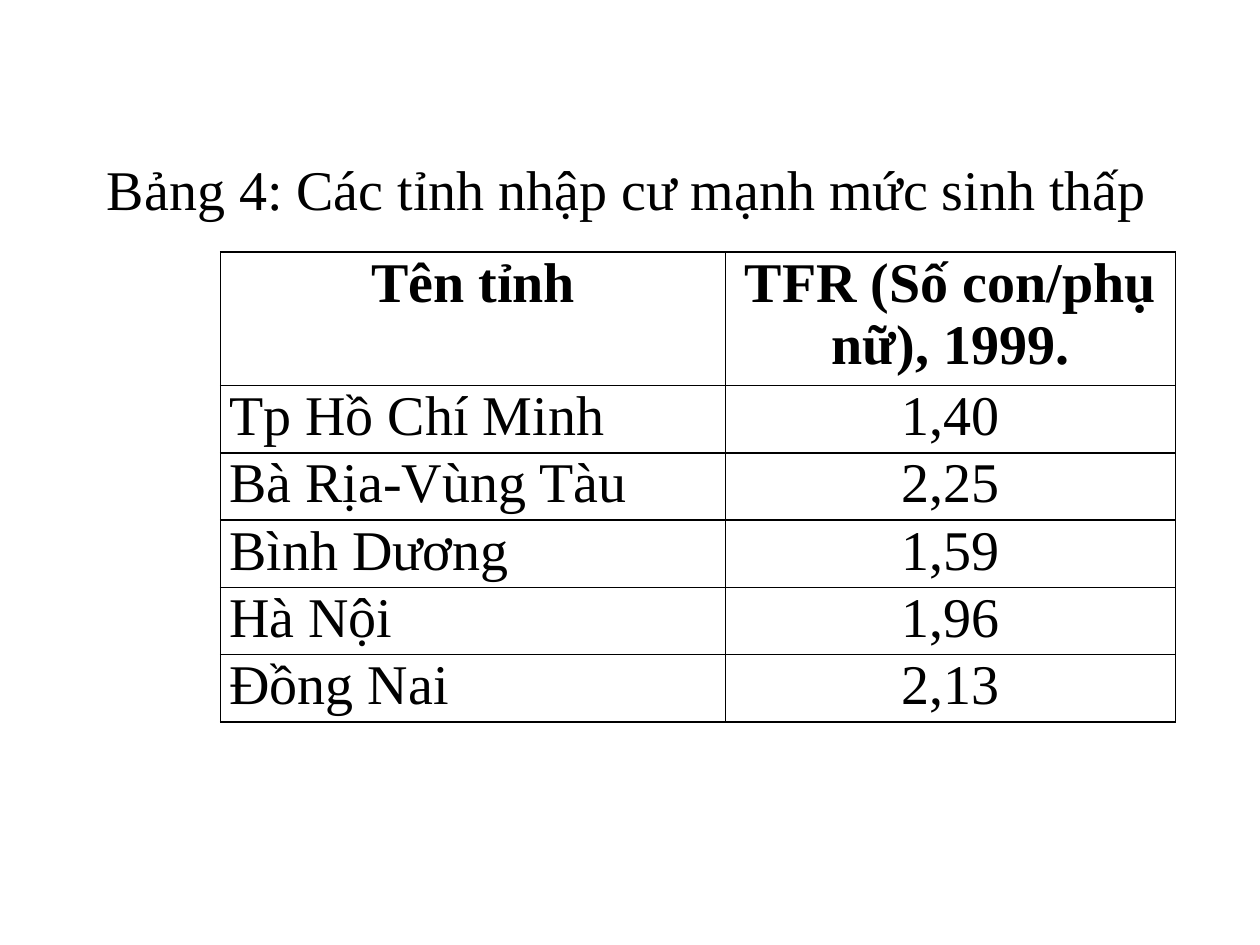
from dataclasses import dataclass

from lxml import etree
from pptx import Presentation
from pptx.dml.color import RGBColor
from pptx.enum.text import MSO_ANCHOR, PP_ALIGN
from pptx.oxml.ns import qn
from pptx.util import Inches, Pt

LEFT = PP_ALIGN.LEFT
CENTER = PP_ALIGN.CENTER
JUSTIFY = PP_ALIGN.JUSTIFY
MIDDLE = MSO_ANCHOR.MIDDLE


@dataclass(frozen=True)
class Theme:
    font: str = "Times New Roman"
    text_size: int = 32
    text_color: str = "000000"
    border_color: str = "000000"
    border_width: int = 1


HEADERS = ("Tên tỉnh", "TFR (Số con/phụ nữ), 1999.")
PROVINCES = (
    ("Tp Hồ Chí Minh", "1,40", LEFT),
    ("Bà Rịa-Vùng Tàu", "2,25", LEFT),
    ("Bình Dương", "1,59", JUSTIFY),
    ("Hà Nội", "1,96", JUSTIFY),
    ("Đồng Nai", "2,13", JUSTIFY),
)
COLUMN_WIDTHS = (4.01, 3.57)
HEADER_HEIGHT = 1.06
TABLE_HEIGHT = 3.73


class SlideBuilder:
    def __init__(self, slide, theme):
        self.slide = slide
        self.theme = theme

    def set_text(self, text_frame, text, alignment, bold=False):
        text_frame.text = text
        paragraph = text_frame.paragraphs[0]
        paragraph.alignment = alignment
        for run in paragraph.runs:
            run.font.name = self.theme.font
            run.font.size = Pt(self.theme.text_size)
            run.font.bold = bold
            run.font.color.rgb = RGBColor.from_string(self.theme.text_color)

    def caption(self, text, left, top, width, height):
        box = self.slide.shapes.add_textbox(
            Inches(left), Inches(top), Inches(width), Inches(height))
        box.text_frame.word_wrap = True
        box.text_frame.vertical_anchor = MIDDLE
        self.set_text(box.text_frame, text, LEFT)

    def add_borders(self, cell):
        properties = cell._tc.get_or_add_tcPr()
        for position, side in enumerate(("lnL", "lnR", "lnT", "lnB")):
            line = etree.Element(
                qn(f"a:{side}"), w=str(Pt(self.theme.border_width)))
            fill = etree.SubElement(line, qn("a:solidFill"))
            etree.SubElement(
                fill, qn("a:srgbClr"), val=self.theme.border_color)
            properties.insert(position, line)

    def fill_cell(self, cell, text, alignment, bold):
        cell.margin_left = cell.margin_right = Inches(0.07)
        cell.margin_top = cell.margin_bottom = 0
        cell.fill.background()
        self.add_borders(cell)
        self.set_text(cell.text_frame, text, alignment, bold)

    def province_table(self, left, top):
        table = self.slide.shapes.add_table(
            len(PROVINCES) + 1, len(HEADERS), Inches(left), Inches(top),
            Inches(sum(COLUMN_WIDTHS)), Inches(TABLE_HEIGHT)).table
        for column, width in zip(table.columns, COLUMN_WIDTHS):
            column.width = Inches(width)
        body_height = (TABLE_HEIGHT - HEADER_HEIGHT) / len(PROVINCES)
        for index, row in enumerate(table.rows):
            row.height = Inches(body_height if index else HEADER_HEIGHT)

        for column, header in enumerate(HEADERS):
            self.fill_cell(table.cell(0, column), header, CENTER, True)
        for row, (name, rate, alignment) in enumerate(PROVINCES, start=1):
            self.fill_cell(table.cell(row, 0), name, alignment, False)
            self.fill_cell(table.cell(row, 1), rate, CENTER, False)


def main():
    presentation = Presentation()
    presentation.slide_width = Inches(10)
    presentation.slide_height = Inches(7.5)
    slide = presentation.slides.add_slide(presentation.slide_layouts[6])
    builder = SlideBuilder(slide, Theme())
    builder.province_table(1.75, 2)
    builder.caption("Bảng 4: Các tỉnh nhập cư mạnh mức sinh thấp",
                    0.75, 1.17, 8.92, 0.64)
    presentation.save("out.pptx")


if __name__ == "__main__":
    main()
